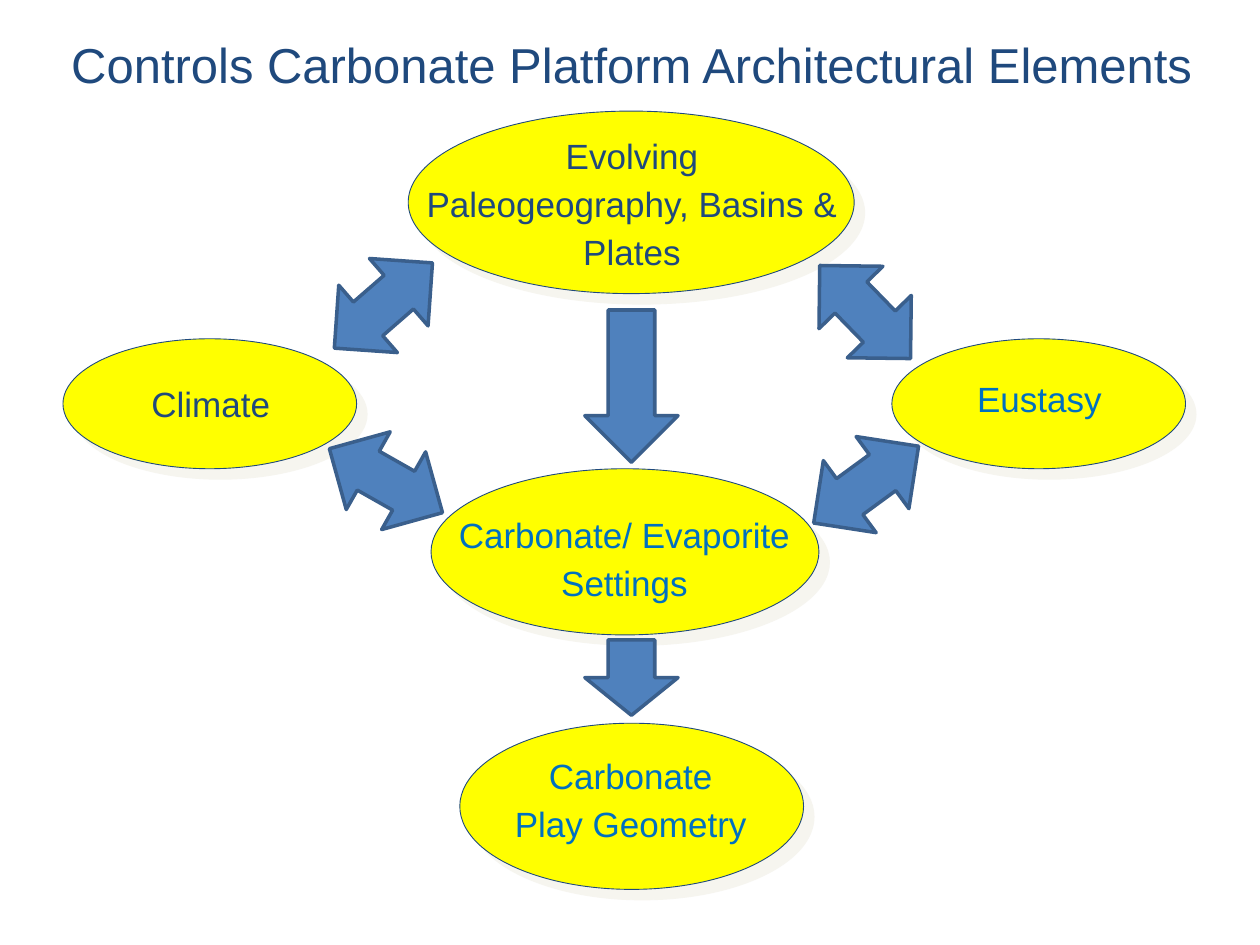
from lxml.etree import SubElement
from pptx import Presentation
from pptx.dml.color import RGBColor
from pptx.enum.shapes import MSO_SHAPE as SHAPE
from pptx.enum.text import MSO_ANCHOR as ANCHOR, PP_ALIGN as ALIGN
from pptx.oxml.ns import qn
from pptx.util import Cm, Pt

NAVY = RGBColor(0x1F, 0x49, 0x7D)
BLUE = RGBColor(0x00, 0x70, 0xC0)
YELLOW = RGBColor(0xFF, 0xFF, 0x00)
ARROW_FILL = RGBColor(0x4F, 0x81, 0xBD)
ARROW_LINE = RGBColor(0x3A, 0x5F, 0x8C)
SHADOW = RGBColor(0xEE, 0xEC, 0xE1)

TITLE = "Controls Carbonate Platform Architectural Elements"
TITLE_BOX = (0.69, 0.56, 24.08, 3.18)

NODES = [
    (["Carbonate", "Play Geometry"], BLUE,
     (9.27, 14.58, 6.93, 3.35), (10.11, 15.32, 5.21, 1.88)),
    (["Evolving", "Paleogeography, Basins &", "Plates"], NAVY,
     (8.23, 2.24, 8.99, 3.68), (8.31, 2.82, 8.86, 2.9)),
    (["Climate"], NAVY,
     (1.27, 6.83, 5.92, 2.62), (2.79, 7.82, 2.92, 0.86)),
    (["Carbonate/ Evaporite", "Settings"], BLUE,
     (8.69, 9.45, 7.82, 3.35), (8.97, 10.46, 7.24, 1.88)),
    (["Eustasy"], BLUE,
     (17.98, 6.83, 5.92, 2.62), (19.43, 7.72, 3.05, 0.86)),
]

DOUBLE_ARROW_SIZE = (1.8, 2.62)
DOUBLE_ARROWS = [
    (16.56, 8.46, 53.8),
    (6.83, 4.85, 49),
    (16.54, 4.98, 135.7),
    (6.88, 8.38, 119.5),
]
DOWN_ARROWS = [(11.79, 6.25, 1.88, 3.07), (11.79, 12.9, 1.88, 1.52)]


def lengths(box):
    return [Cm(value) for value in box]


def format_paragraph(paragraph, size, color):
    paragraph.alignment = ALIGN.CENTER
    paragraph.font.name = "Arial"
    paragraph.font.size = Pt(size)
    paragraph.font.color.rgb = color


def add_title(slide):
    title = slide.shapes.title
    title.left, title.top, title.width, title.height = lengths(TITLE_BOX)
    title.text_frame.text = TITLE
    title.text_frame.vertical_anchor = ANCHOR.TOP
    format_paragraph(title.text_frame.paragraphs[0], 28, NAVY)


def add_shape(slide, kind, box, fill, line, line_width):
    shape = slide.shapes.add_shape(kind, *lengths(box))
    shape.shadow.inherit = False
    shape.fill.solid()
    shape.fill.fore_color.rgb = fill
    shape.line.color.rgb = line
    shape.line.width = Pt(line_width)
    return shape


def add_shadow(shape):
    effects = shape.element.spPr.find(qn("a:effectLst"))
    shadow = SubElement(effects, qn("a:outerShdw"), dist=str(Pt(8.5)),
                        dir=str(45 * 60000), algn="ctr", rotWithShape="0")
    color = SubElement(shadow, qn("a:srgbClr"), val=str(SHADOW))
    SubElement(color, qn("a:alpha"), val="50000")


def add_label(slide, lines, color, box):
    frame = slide.shapes.add_textbox(*lengths(box)).text_frame
    frame.word_wrap = False
    for index, line in enumerate(lines):
        paragraph = frame.add_paragraph() if index else frame.paragraphs[0]
        paragraph.text = line
        paragraph.line_spacing = 0.7
        if index:
            paragraph.space_before = Pt(10.5)
        format_paragraph(paragraph, 20, color)


def main():
    presentation = Presentation()
    presentation.slide_width, presentation.slide_height = Cm(25.4), Cm(19.05)
    slide = presentation.slides.add_slide(presentation.slide_layouts[5])
    add_title(slide)
    for lines, color, ellipse_box, label_box in NODES:
        add_shadow(add_shape(slide, SHAPE.OVAL, ellipse_box, YELLOW, NAVY, 0.5))
        add_label(slide, lines, color, label_box)
    for left, top, rotation in DOUBLE_ARROWS:
        arrow = add_shape(slide, SHAPE.UP_DOWN_ARROW, (left, top, *DOUBLE_ARROW_SIZE),
                          ARROW_FILL, ARROW_LINE, 2)
        arrow.rotation = rotation
    for box in DOWN_ARROWS:
        add_shape(slide, SHAPE.DOWN_ARROW, box, ARROW_FILL, ARROW_LINE, 2)
    presentation.save("out.pptx")


if __name__ == "__main__":
    main()
